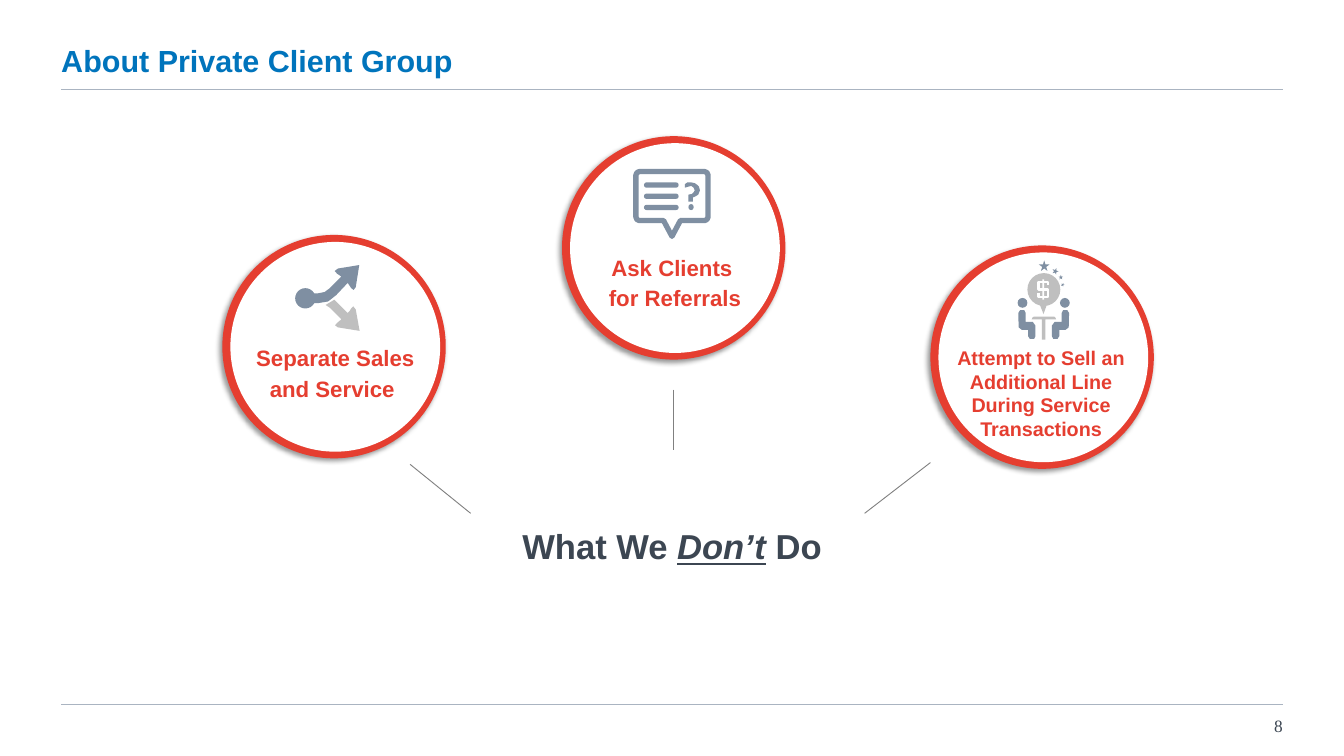
from dataclasses import dataclass

from lxml.etree import SubElement
from pptx import Presentation
from pptx.dml.color import RGBColor
from pptx.enum.shapes import MSO_CONNECTOR, MSO_SHAPE
from pptx.enum.text import MSO_ANCHOR, PP_ALIGN
from pptx.oxml.ns import qn
from pptx.shapes.autoshape import Shape
from pptx.shapes.shapetree import SlideShapes
from pptx.text.text import TextFrame, _Paragraph
from pptx.util import Cm, Pt

COLORS = {
    "title": "0074BC", "ink": "3C4652", "red": "E53E30", "white": "FFFFFF",
    "rule": "AAB4C1", "spoke": "808080", "slate": "7F8FA2", "silver": "BFBFBF",
}
MARGIN_LEFT, MARGIN_RIGHT = 1.75, 36.63
CONTENT_WIDTH = MARGIN_RIGHT - MARGIN_LEFT
RING_SIZE, DISC_SIZE = 6.38, 5.99
MIRROR_SUM = 5961  # twice the x of the table's axis, in hundredths of a cm

Point = tuple[float, float]
Box = tuple[float, float, float, float]


@dataclass(frozen=True)
class Practice:
    text: str
    ring: Point
    label: Box
    spoke: tuple[Point, Point]
    size: float = 18
    line_spacing: float = 1.15
    space_after: float = 6


@dataclass(frozen=True)
class Star:
    left: float
    top: float
    size: float
    rotation: float


PRACTICES = [
    Practice("Separate Sales and Service ", (6.35, 6.71), (6.58, 9.6, 5.99, 2.03),
             ((11.71, 13.26), (13.44, 14.66))),
    Practice("Ask Clients \vfor Referrals", (16.05, 3.89), (16.28, 7.01, 5.99, 2.03),
             ((19.23, 11.13), (19.23, 12.85))),
    Practice("Attempt to Sell an Additional Line During Service Transactions",
             (26.57, 7.01), (26.87, 9.75, 5.72, 3.0),
             ((26.57, 13.21), (24.69, 14.66)), 16, 1.0, 8),
]
STARS = [Star(29.67, 7.44, 0.3, 0), Star(30.05, 7.65, 0.18, 20),
         Star(30.23, 7.85, 0.13, 0), Star(30.3, 8.08, 0.1, 20)]

# Icon outlines, in hundredths of a centimetre
DOWN_ARROW = [
    (930, 871), (955, 856), (993, 894), (998, 889), (1003, 881), (1009, 875), (1016, 884),
    (1027, 945), (965, 935), (957, 929), (963, 922), (975, 912), (942, 879)]
UP_ARROW = [
    (889, 838), (907, 838), (927, 834), (942, 823), (975, 790), (963, 782), (956, 774),
    (965, 767), (1026, 757), (1016, 820), (1010, 828), (1003, 823), (993, 808),
    (960, 843), (937, 861), (907, 866), (889, 866)]
SPEECH_BUBBLE = [
    (1826, 490), (2012, 490), (2019, 493), (2022, 500), (2022, 620), (2019, 627),
    (2012, 630), (1943, 630), (1919, 675), (1895, 630), (1826, 630), (1819, 627),
    (1816, 620), (1816, 500), (1819, 493)]
QUESTION_HOOK = [
    (1956, 526), (1963, 521), (1974, 521), (1984, 523), (1991, 528), (1996, 533),
    (1999, 544), (1996, 551), (1994, 556), (1986, 561), (1979, 564), (1979, 576),
    (1966, 576), (1966, 556), (1976, 554), (1981, 549), (1984, 544), (1981, 536),
    (1974, 531), (1966, 533), (1956, 536)]
SEATED_BODY = [
    (2908, 894), (2913, 886), (2925, 886), (2929, 894), (2929, 919), (2949, 919),
    (2957, 930), (2957, 960), (2953, 968), (2941, 968), (2936, 960), (2936, 942),
    (2918, 942), (2909, 935)]
TABLE = [
    (2946, 912), (2949, 906), (2954, 904), (3010, 904), (3014, 907), (3016, 912),
    (2985, 912), (2985, 970), (2975, 970), (2975, 912)]
COIN_TAIL = [(2969, 869), (2990, 869), (2980, 897)]
DOLLAR_CURVE = [
    (2993, 815), (2993, 805), (2966, 805), (2966, 827),
    (2993, 827), (2993, 848), (2966, 848), (2966, 838)]


def rgb(color: str) -> RGBColor:
    return RGBColor.from_string(COLORS[color])


def paint(shape: Shape, color: str) -> Shape:
    shape.shadow.inherit = False
    shape.fill.solid()
    shape.fill.fore_color.rgb = rgb(color)
    shape.line.fill.background()
    return shape


def add_preset(shapes: SlideShapes, kind: MSO_SHAPE, box: Box, color: str) -> Shape:
    return paint(shapes.add_shape(kind, *map(Cm, box)), color)


def add_outline(shapes: SlideShapes, points: list[Point], color: str,
                closed: bool = True) -> Shape:
    builder = shapes.build_freeform(*points[0], scale=Cm(0.01))
    builder.add_line_segments(points[1:], close=closed)
    return paint(builder.convert_to_shape(), color)


def stroke(shape: Shape, color: str, width: float) -> None:
    shape.line.color.rgb = rgb(color)
    shape.line.width = Pt(width)


def add_line(shapes: SlideShapes, start: Point, end: Point, color: str, width: float) -> None:
    line = shapes.add_connector(MSO_CONNECTOR.STRAIGHT, *map(Cm, start + end))
    stroke(line, color, width)
    SubElement(line._element.spPr, qn("a:effectLst"))


def add_text_frame(shapes: SlideShapes, box: Box) -> TextFrame:
    frame = shapes.add_textbox(*map(Cm, box)).text_frame
    frame.word_wrap = True
    return frame


def style(paragraph: _Paragraph, size: float, color: str, align: PP_ALIGN,
          font_name: str = "Arial", bold: bool = True) -> None:
    paragraph.alignment = align
    font = paragraph.font
    font.name, font.size, font.bold = font_name, Pt(size), bold
    font.color.rgb = rgb(color)


def cast_shadow(shape: Shape) -> None:
    effects = shape._element.spPr.find(qn("a:effectLst"))
    shadow = SubElement(effects, qn("a:outerShdw"), blurRad=str(Pt(4)), dist=str(Pt(3)),
                        dir="8100000", algn="tr", rotWithShape="0")
    black = SubElement(shadow, qn("a:srgbClr"), val="000000")
    SubElement(black, qn("a:alpha"), val="40000")


def add_practice(shapes: SlideShapes, practice: Practice) -> None:
    left, top = practice.ring
    cast_shadow(add_preset(shapes, MSO_SHAPE.OVAL, (left, top, RING_SIZE, RING_SIZE), "red"))
    add_preset(shapes, MSO_SHAPE.OVAL,
               (left + 0.23, top + 0.2, DISC_SIZE, DISC_SIZE), "white")
    add_line(shapes, *practice.spoke, "spoke", 0.75)
    label = add_text_frame(shapes, practice.label).paragraphs[0]
    label.text = practice.text
    label.line_spacing = practice.line_spacing
    label.space_after = Pt(practice.space_after)
    style(label, practice.size, "red", PP_ALIGN.CENTER)


def add_split_icon(shapes: SlideShapes) -> None:
    add_outline(shapes, DOWN_ARROW, "silver")
    add_outline(shapes, UP_ARROW, "slate")
    add_preset(shapes, MSO_SHAPE.OVAL, (8.43, 8.23, 0.58, 0.58), "slate")


def add_question_icon(shapes: SlideShapes) -> None:
    stroke(add_outline(shapes, SPEECH_BUBBLE, "white"), "slate", 4.3)
    for row in range(3):
        bar = add_preset(shapes, MSO_SHAPE.ROUNDED_RECTANGLE,
                         (18.39, 5.21 + 0.32 * row, 0.99, 0.15), "slate")
        bar.adjustments[0] = 0.5
    add_outline(shapes, QUESTION_HOOK, "slate")
    add_preset(shapes, MSO_SHAPE.OVAL, (19.66, 5.83, 0.15, 0.17), "slate")


def add_meeting_icon(shapes: SlideShapes) -> None:
    for head_left in (29.06, 30.27):
        add_preset(shapes, MSO_SHAPE.OVAL, (head_left, 8.51, 0.28, 0.28), "slate")
    for body in (SEATED_BODY, [(MIRROR_SUM - x, y) for x, y in SEATED_BODY]):
        add_outline(shapes, body, "slate")
    add_outline(shapes, TABLE, "silver")
    add_outline(shapes, COIN_TAIL, "silver")
    add_preset(shapes, MSO_SHAPE.OVAL, (29.34, 7.8, 0.94, 0.94), "silver")
    dollar = add_outline(shapes, DOLLAR_CURVE, "white", closed=False)
    dollar.fill.background()
    stroke(dollar, "white", 2)
    add_preset(shapes, MSO_SHAPE.RECTANGLE, (29.77, 7.98, 0.05, 0.58), "white")
    for star in STARS:
        add_preset(shapes, MSO_SHAPE.STAR_5_POINT,
                   (star.left, star.top, star.size, star.size), "slate").rotation = star.rotation


def add_texts(shapes: SlideShapes) -> None:
    title_frame = add_text_frame(shapes, (MARGIN_LEFT, 1.27, CONTENT_WIDTH, 0.97))
    title_frame.vertical_anchor = MSO_ANCHOR.BOTTOM
    title_frame.margin_left = title_frame.margin_top = title_frame.margin_bottom = 0
    title = title_frame.paragraphs[0]
    title.text = "About Private Client Group"
    style(title, 24.7, "title", PP_ALIGN.LEFT)

    headline = add_text_frame(shapes, (MARGIN_LEFT, 15.57, CONTENT_WIDTH, 0.86)).paragraphs[0]
    for words in ("What We ", "Don’t", " Do"):
        run = headline.add_run()
        run.text = words
        if words == "Don’t":
            run.font.italic = run.font.underline = True
    headline.line_spacing, headline.space_after = Pt(14), Pt(6)
    style(headline, 28, "ink", PP_ALIGN.CENTER)

    page_number = add_text_frame(shapes, (35.31, 20.29, 1.57, 0.86)).paragraphs[0]
    page_number.text = "8"
    style(page_number, 14, "ink", PP_ALIGN.RIGHT, "Times New Roman", bold=False)


def main() -> None:
    presentation = Presentation()
    presentation.slide_width, presentation.slide_height = Cm(38.38), Cm(21.59)
    shapes = presentation.slides.add_slide(presentation.slide_layouts[6]).shapes
    for rule_y in (2.54, 20.12):
        add_line(shapes, (MARGIN_LEFT, rule_y), (MARGIN_RIGHT, rule_y), "rule", 0.25)
    add_texts(shapes)
    for practice in PRACTICES:
        add_practice(shapes, practice)
    add_split_icon(shapes)
    add_question_icon(shapes)
    add_meeting_icon(shapes)
    presentation.save("out.pptx")


if __name__ == "__main__":
    main()
